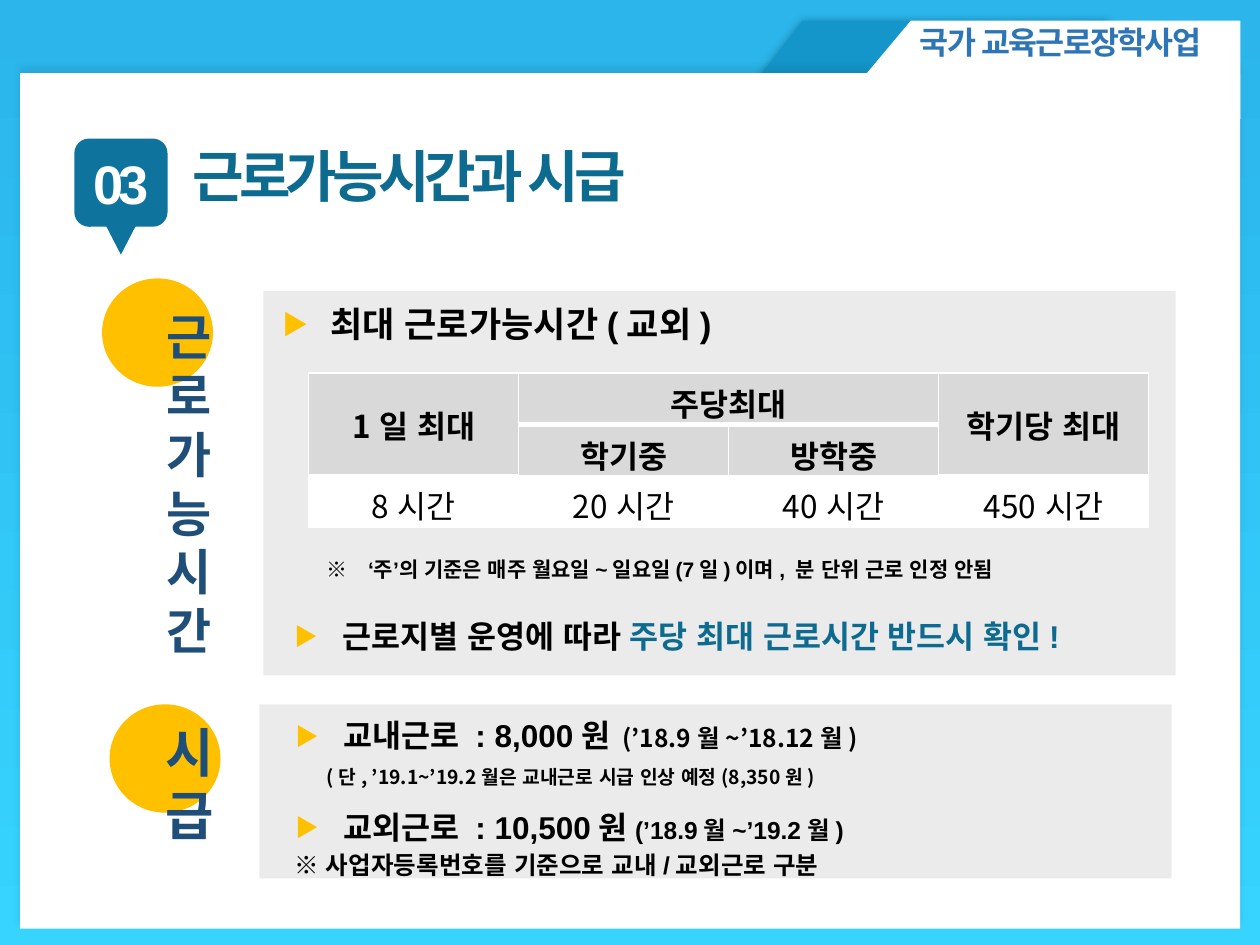
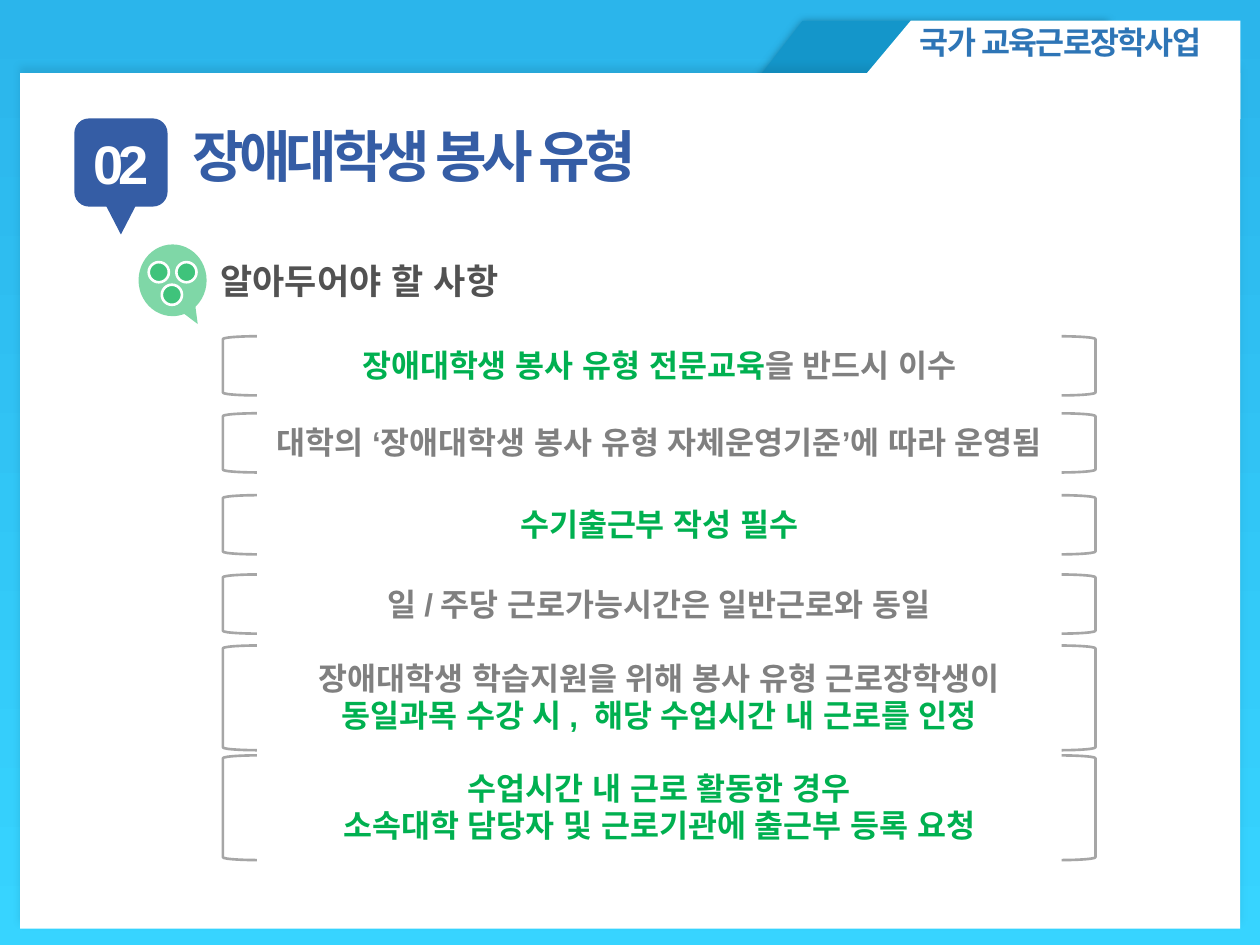
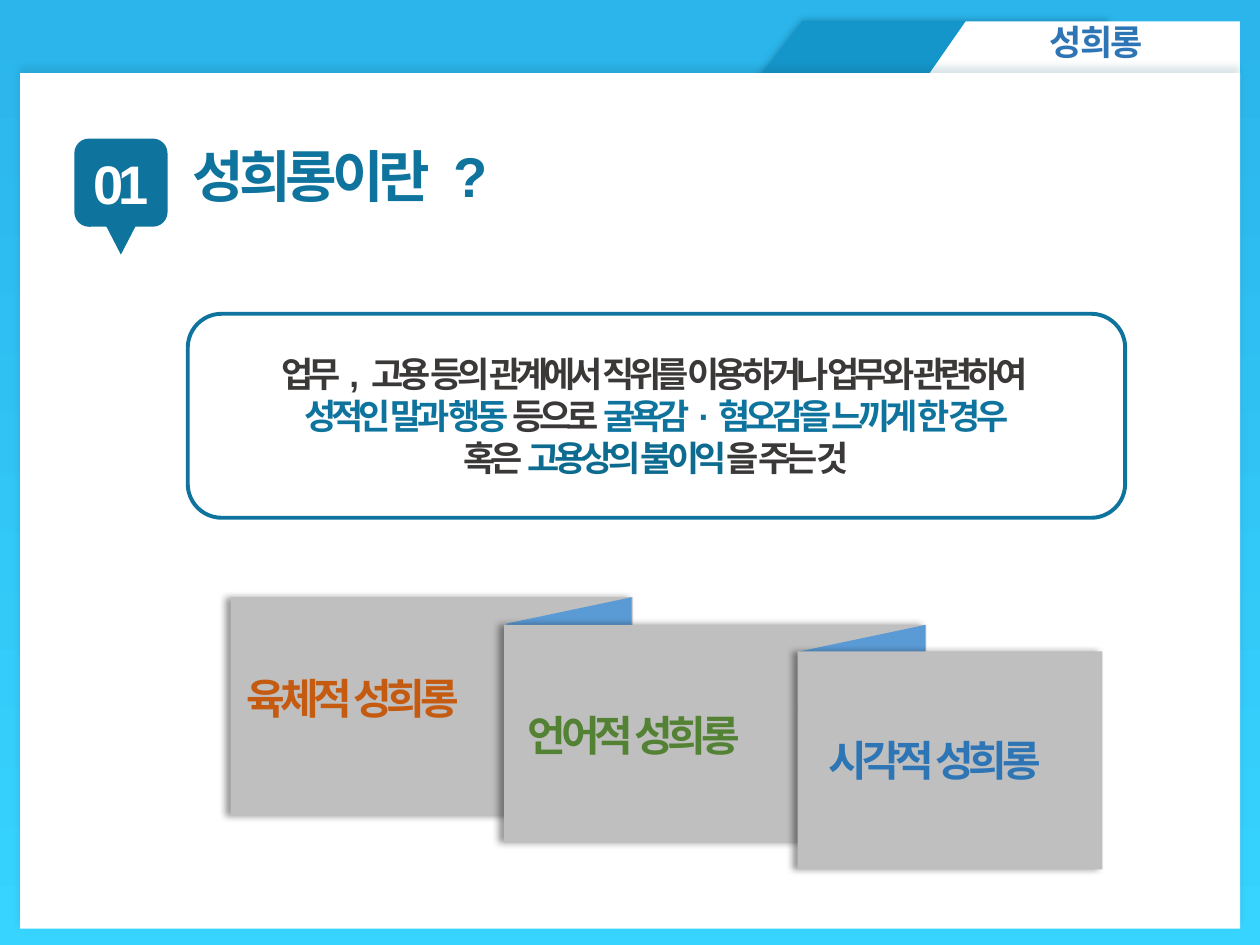
from dataclasses import dataclass
from typing import Any, NamedTuple, Optional

from lxml.etree import SubElement
from pptx import Presentation
from pptx.dml.color import RGBColor
from pptx.enum.shapes import MSO_SHAPE as Preset
from pptx.enum.text import MSO_ANCHOR as Anchor, MSO_AUTO_SIZE as AutoSize, PP_ALIGN as Align
from pptx.oxml.ns import qn
from pptx.util import Pt

WHITE = RGBColor(0xFF, 0xFF, 0xFF)
BLACK = RGBColor(0, 0, 0)
SKY_TOP = RGBColor(0x2B, 0xB5, 0xEB)
SKY_BOTTOM = RGBColor(0x37, 0xD4, 0xFF)
TAB_BLUE = RGBColor(0x14, 0x96, 0xCA)
SHADOW_BLUE = RGBColor(0x0A, 0x4C, 0x66)
TEAL = RGBColor(0x0F, 0x74, 0x9D)
DEEP_TEAL = RGBColor(0x0E, 0x6B, 0x90)
INDIGO = RGBColor(0x35, 0x5D, 0xA5)
NAVY = RGBColor(0x1F, 0x4E, 0x79)
BLUE = RGBColor(0x2E, 0x75, 0xB6)
FOLD_BLUE = RGBColor(0x5B, 0x9B, 0xD5)
AMBER = RGBColor(0xFF, 0xC0, 0x00)
GREEN = RGBColor(0x00, 0xB0, 0x50)
OLIVE = RGBColor(0x54, 0x82, 0x35)
ORANGE = RGBColor(0xC5, 0x5A, 0x11)
LIGHT_GRAY = RGBColor(0xD9, 0xD9, 0xD9)
SILVER = RGBColor(0xBF, 0xBF, 0xBF)
BRACKET_GRAY = RGBColor(0xA6, 0xA6, 0xA6)
GRAY = RGBColor(0x80, 0x80, 0x80)
DARK_GRAY = RGBColor(0x52, 0x52, 0x52)
CHARCOAL = RGBColor(0x3B, 0x38, 0x38)

LATIN = "Arial"
KOREAN = "Noto Sans CJK KR"


class Box(NamedTuple):
    left: float
    top: float
    width: float
    height: float

    def lengths(self) -> tuple:
        return tuple(Pt(value) for value in self)


class Shadow(NamedTuple):
    color: RGBColor
    opacity: int
    blur: float
    distance: float
    direction: int


@dataclass
class Words:
    text: str
    size: float = 18
    color: RGBColor = BLACK
    bold: bool = True
    font: str = LATIN
    tracking: float = 0


@dataclass
class Line:
    words: list[Words]
    align: Align = Align.LEFT
    bullet: bool = False
    indent: float = 0
    spacing: float = 1.2


@dataclass
class Look:
    fill: Optional[RGBColor] = None
    opacity: int = 100
    line: Optional[RGBColor] = None
    weight: float = 1.5
    shadow: Optional[Shadow] = None
    rotation: int = 0
    flipped: bool = False


@dataclass
class Page:
    title: str
    number: str
    color: RGBColor
    title_color: RGBColor
    badge_top: float
    tab_text: Words
    tab_text_box: Box
    tab: Box
    tab_in_front: bool = True


PANEL_SHADOW = Shadow(SHADOW_BLUE, 14, 4, 3, 270)
TAB_SHADOW = Shadow(SHADOW_BLUE, 52, 5, 0, 0)
RIBBON_SHADOW = Shadow(BLACK, 40, 4, 3, 180)
WIDE_TAB = Box(563, -77.8, 56.2, 235.4)
NARROW_TAB = Box(582.5, -57.6, 56.2, 195.8)
PROGRAM = Words("국가 교육근로장학사업", 18, BLUE, tracking=-1)
PROGRAM_BOX = Box(518.6, 9.4, 193, 28.8)


def assign(target: Any, formats: dict) -> None:
    for name, value in formats.items():
        setattr(target, name, value)


def write(frame: Any, lines: list[Line], anchor: Anchor = Anchor.TOP,
          inset: tuple = (7.2, 3.6)) -> None:
    side, edge = Pt(inset[0]), Pt(inset[1])
    assign(frame, {"word_wrap": True, "auto_size": AutoSize.NONE, "vertical_anchor": anchor,
                   "margin_left": side, "margin_right": side,
                   "margin_top": edge, "margin_bottom": edge})
    for index, line in enumerate(lines):
        write_line(frame.add_paragraph() if index else frame.paragraphs[0], line)


def write_line(paragraph: Any, line: Line) -> None:
    largest = max(words.size for words in line.words)
    assign(paragraph, {"alignment": line.align, "line_spacing": Pt(largest * line.spacing)})
    properties = paragraph._p.get_or_add_pPr()
    if line.indent or line.bullet:
        properties.set("marL", str(Pt(27.4 if line.bullet else line.indent)))
    if line.bullet:
        properties.set("indent", str(-Pt(27.4)))
        color = SubElement(properties, qn("a:buClr"))
        SubElement(color, qn("a:srgbClr"), val=str(AMBER))
        SubElement(properties, qn("a:buSzPct"), val="75000")
        SubElement(properties, qn("a:buFont"), typeface=KOREAN)
        SubElement(properties, qn("a:buChar"), char="▶")
    for words in line.words:
        run = paragraph.add_run()
        run.text = words.text
        assign(run.font, {"name": words.font, "size": Pt(words.size), "bold": words.bold})
        run.font.color.rgb = words.color
        run_properties = run._r.get_or_add_rPr()
        SubElement(run_properties, qn("a:ea"), typeface=LATIN)
        if words.tracking:
            run_properties.set("spc", str(int(words.tracking * 100)))


def add_text(slide: Any, box: Box, lines: list[Line]) -> None:
    write(slide.shapes.add_textbox(*box.lengths()).text_frame, lines)


def add_label(slide: Any, box: Box, lines: list[Line], anchor: Anchor = Anchor.MIDDLE) -> None:
    shape = add_figure(slide, Preset.FLOWCHART_ALTERNATE_PROCESS, box, Look())
    write(shape.text_frame, lines, anchor, (0, 0))


def add_upright_label(slide: Any, box: Box, text: str, size: float) -> None:
    shape = add_figure(slide, Preset.FLOWCHART_PROCESS, box, Look(rotation=90))
    write(shape.text_frame, [Line([Words(letter, size, NAVY)]) for letter in text],
          Anchor.MIDDLE, (0, 0))
    shape.text_frame._txBody.bodyPr.set("vert", "vert270")


def dress(shape: Any, look: Look) -> None:
    shape.rotation = look.rotation
    if look.flipped:
        shape._element.spPr.find(qn("a:xfrm")).set("flipV", "1")
    if look.fill is None:
        shape.fill.background()
    else:
        shape.fill.solid()
        shape.fill.fore_color.rgb = look.fill
        if look.opacity < 100:
            color = shape._element.spPr.find(qn("a:solidFill"))[0]
            SubElement(color, qn("a:alpha"), val=str(look.opacity * 1000))
    if look.line is None:
        shape.line.fill.background()
    else:
        shape.line.color.rgb = look.line
        shape.line.width = Pt(look.weight)
    shape.shadow.inherit = False
    if look.shadow:
        effects = shape._element.spPr.find(qn("a:effectLst"))
        shadow = SubElement(effects, qn("a:outerShdw"), blurRad=str(Pt(look.shadow.blur)),
                            dist=str(Pt(look.shadow.distance)),
                            dir=str(look.shadow.direction * 60000),
                            algn="ctr", rotWithShape="0")
        color = SubElement(shadow, qn("a:srgbClr"), val=str(look.shadow.color))
        SubElement(color, qn("a:alpha"), val=str(look.shadow.opacity * 1000))


def add_figure(slide: Any, preset: Preset, box: Box, look: Look) -> Any:
    shape = slide.shapes.add_shape(preset, *box.lengths())
    dress(shape, look)
    return shape


def add_frame(slide: Any, page: Page) -> None:
    tab = (Preset.FLOWCHART_MANUAL_INPUT, page.tab, Look(WHITE, rotation=90, flipped=True))
    panel = (Preset.RECTANGLE, Box(11.5, 41.8, 697.2, 488.9), Look(WHITE, shadow=PANEL_SHADOW))
    add_figure(slide, Preset.FLOWCHART_MANUAL_INPUT, Box(496, -69.1, 56.2, 218.2),
               Look(TAB_BLUE, shadow=TAB_SHADOW, rotation=90, flipped=True))
    for figure in (panel, tab) if page.tab_in_front else (tab, panel):
        add_figure(slide, *figure)
    add_text(slide, page.tab_text_box, [Line([page.tab_text])])


def add_heading(slide: Any, page: Page) -> None:
    top = page.badge_top
    badge = add_figure(slide, Preset.FLOWCHART_ALTERNATE_PROCESS,
                       Box(42.5, top, 53.3, 50.4), Look(page.color))
    write(badge.text_frame, [Line([Words(page.number, 31, WHITE, tracking=-3)], Align.CENTER)],
          Anchor.MIDDLE, (2.9, 3.6))
    add_figure(slide, Preset.FLOWCHART_MERGE, Box(58.3, top + 45.4, 21.6, 20.9),
               Look(page.color))
    title = slide.shapes.title
    left, upper, width, height = Box(103, top - 1.9, 363, 46).lengths()
    assign(title, {"left": left, "top": upper, "width": width, "height": height})
    write(title.text_frame, [Line([Words(page.title, 32, page.title_color, tracking=-3)])])
    slide.shapes._spTree.append(title._element)


def start_slide(presentation: Any, page: Page) -> Any:
    slide = presentation.slides.add_slide(presentation.slide_layouts[5])
    add_frame(slide, page)
    add_heading(slide, page)
    return slide


def add_border(cell: Any, side: str, weight: float) -> None:
    border = SubElement(cell._tc.get_or_add_tcPr(), qn(f"a:ln{side}"), w=str(Pt(weight)))
    SubElement(SubElement(border, qn("a:solidFill")), qn("a:srgbClr"), val=str(WHITE))


def add_hours_table(slide: Any) -> None:
    rows = [["1일 최대", "주당최대", "", "학기당 최대"],
            ["", "학기중", "방학중", ""],
            ["8시간", "20시간", "40시간", "450시간"]]
    tall_margins = {(0, 0): 5.2, (0, 3): 1.8}
    box = Box(176.4, 213.1, 480, 88.5)
    table = slide.shapes.add_table(len(rows), len(rows[0]), *box.lengths()).table
    assign(table, {"first_row": False, "horz_banding": False})
    for first, last in (((0, 0), (1, 0)), ((0, 1), (0, 2)), ((0, 3), (1, 3))):
        table.cell(*first).merge(table.cell(*last))
    for row, texts in enumerate(rows):
        table.rows[row].height = Pt(29.5)
        is_header = row < 2
        for column, text in enumerate(texts):
            cell = table.cell(row, column)
            for side in "LRTB":
                add_border(cell, side, 3 if (row, side) in ((0, "B"), (1, "T")) else 1)
            cell.fill.solid()
            cell.fill.fore_color.rgb = LIGHT_GRAY if is_header else WHITE
            margin = tall_margins.get((row, column), 6.5 if is_header else 7.5)
            assign(cell, {"vertical_anchor": Anchor.MIDDLE, "margin_top": Pt(margin),
                          "margin_bottom": Pt(0)})
            if text:
                write_line(cell.text_frame.paragraphs[0],
                           Line([Words(text, bold=is_header, font=KOREAN)], Align.CENTER))


def build_hours(presentation: Any) -> None:
    slide = start_slide(presentation, Page(
        "근로가능시간과 시급", "03", TEAL, DEEP_TEAL, 79.2,
        PROGRAM, PROGRAM_BOX, WIDE_TAB))
    for left, top in ((58.3, 159.1), (62.6, 402.5)):
        add_figure(slide, Preset.OVAL, Box(left, top, 63.4, 61.9), Look(AMBER))
    for box in (Box(150.5, 166.3, 521.3, 219.6), Box(148.3, 402.5, 521.3, 99.4)):
        add_figure(slide, Preset.RECTANGLE, box, Look(LIGHT_GRAY, 50))
    add_upright_label(slide, Box(7.2, 248.4, 231.1, 55.4), "근로가능시간", 28)
    add_upright_label(slide, Box(76.3, 432, 67.7, 31), "시급", 30)
    add_label(slide, Box(159.8, 170, 290.9, 29.5),
              [Line([Words("최대 근로가능시간(교외)", 20)], bullet=True)])
    add_label(slide, Box(166.3, 340.6, 503.3, 45.4),
              [Line([Words("근로지별 운영에 따라 "),
                     Words("주당 최대 근로시간 반드시 확인!", color=DEEP_TEAL)], bullet=True)])
    add_label(slide, Box(185, 311, 390.2, 28.8),
              [Line([Words("※ ", 12, tracking=4.3), Words("‘주’", 12, font=KOREAN),
                     Words("의 기준은 매주 월요일~일요일(7일)이며, 분 단위 근로 인정 안됨", 12)])])
    add_label(slide, Box(164.9, 394.6, 412.6, 79.2), [
        Line([Words("교내근로 : 8,000원"), Words(" (’18.9월~’18.12월)", 14, font=KOREAN)],
             bullet=True, spacing=1.8),
        Line([Words("(단, ’19.1~’19.2월은 교내근로 시급 인상 예정(8,350원)", 11, font=KOREAN)],
             indent=18, spacing=1.8),
        Line([Words("교외근로 : 10,500원"), Words("(’18.9월~’19.2월)", 14)],
             bullet=True, spacing=1.8)], Anchor.TOP)
    add_label(slide, Box(167, 479.5, 434.9, 28.8),
              [Line([Words("※ 사업자등록번호를 기준으로 교내/교외근로 구분", 14)])])
    add_hours_table(slide)


def build_volunteering(presentation: Any) -> None:
    slide = start_slide(presentation, Page(
        "장애대학생 봉사 유형", "02", INDIGO, INDIGO, 67.7,
        PROGRAM, PROGRAM_BOX, WIDE_TAB))
    add_text(slide, Box(118.8, 144.7, 319.7, 31.7),
             [Line([Words("알아두어야 할 사항", 20, DARK_GRAY)])])
    callout = add_figure(slide, Preset.OVAL_CALLOUT, Box(79.2, 139.7, 38.9, 41), Look(GREEN, 50))
    callout.adjustments[0], callout.adjustments[1] = 0.37, 0.61
    for left, top in ((85, 149.8), (100.8, 149.8), (92.5, 162.7)):
        add_figure(slide, Preset.OVAL, Box(left, top, 11.5, 11.5), Look(GREEN, 50, WHITE))
    notices = [
        (192.2, [[Words("장애대학생 봉사 유형 전문교육", color=GREEN),
                  Words("을 반드시 이수", color=GRAY)]]),
        (236.2, [[Words("대학의 ", color=GRAY), Words("‘", color=GRAY, font=KOREAN),
                  Words("장애대학생 봉사 유형 자체운영기준", color=GRAY),
                  Words("’", color=GRAY, font=KOREAN), Words("에 따라 운영됨", color=GRAY)]]),
        (283, [[Words("수기출근부 작성 필수", color=GREEN)]]),
        (328.3, [[Words("일/주당 근로가능시간은 일반근로와 동일", color=GRAY)]]),
        (368.9, [[Words("장애대학생 학습지원을 위해 봉사 유형 근로장학생이", color=GRAY)],
                 [Words("동일과목 수강 시, 해당 수업시간 내 근로를 인정", color=GREEN)]]),
        (431.7, [[Words("수업시간 내 근로 활동한 경우", color=GREEN)],
                 [Words("소속대학 담당자 및 근로기관에 출근부 등록 요청", color=GREEN)]]),
    ]
    for top, lines in notices:
        height = 7.8 + 26 * len(lines)
        for preset, left in ((Preset.LEFT_BRACKET, 127.4), (Preset.RIGHT_BRACKET, 606.6)):
            add_figure(slide, preset, Box(left, top, 19.4, height),
                       Look(WHITE, line=BRACKET_GRAY))
        add_text(slide, Box(147, top + 0.5 + 1.7 * len(lines), 459.4, height - 5),
                 [Line(words, Align.CENTER) for words in lines])


def add_fold(slide: Any, left: float, top: float) -> None:
    corners = [(1.4, 15.1), (73, 0), (73, 50.4), (0, 50.4)]
    points = [(Pt(left + x), Pt(top + y)) for x, y in corners]
    builder = slide.shapes.build_freeform(*points[0])
    builder.add_line_segments(points[1:], close=True)
    dress(builder.convert_to_shape(), Look(FOLD_BLUE))


def build_harassment(presentation: Any) -> None:
    slide = start_slide(presentation, Page(
        "성희롱이란 ?", "01", TEAL, TEAL, 79.2,
        Words("성희롱", 20, BLUE, tracking=-1), Box(592.6, 7.9, 101.5, 31.7),
        NARROW_TAB, tab_in_front=False))
    definition = add_figure(slide, Preset.FLOWCHART_ALTERNATE_PROCESS,
                            Box(107.3, 179.3, 535.7, 116.6), Look(line=TEAL, weight=2.25))
    phrases = [
        [("업무, 고용 등의 관계에서 직위를 이용하거나 업무와 관련하여 ", CHARCOAL)],
        [("성적인 말과 행동 ", TEAL), ("등으로 ", CHARCOAL),
         ("굴욕감·혐오감을 느끼게 한 경우", TEAL)],
        [("혹은 ", CHARCOAL), ("고용상의 불이익", DEEP_TEAL), ("을 주는 것", CHARCOAL)],
    ]
    write(definition.text_frame,
          [Line([Words(text, 20, color, tracking=-3) for text, color in phrase], Align.CENTER)
           for phrase in phrases], Anchor.MIDDLE, (0, 0))
    ribbons = [Box(131.8, 341.3, 229.7, 124.6), Box(288, 357.1, 241.2, 124.6),
               Box(455.8, 372.2, 174.2, 124.6)]
    for index, ribbon in enumerate(ribbons):
        add_figure(slide, Preset.RECTANGLE, ribbon, Look(SILVER, shadow=RIBBON_SHADOW))
        if index + 1 < len(ribbons):
            add_fold(slide, ribbons[index + 1].left, ribbon.top)
    for text, color, left, top in (("육체적 성희롱", ORANGE, 133.9, 380.9),
                                   ("언어적 성희롱", OLIVE, 294.5, 401.9),
                                   ("시각적 성희롱", BLUE, 466.6, 416.4)):
        add_text(slide, Box(left, top, 228.2, 36), [Line([Words(text, 24, color, tracking=-3)])])


def main() -> None:
    presentation = Presentation()
    assign(presentation, {"slide_width": Pt(720), "slide_height": Pt(540)})
    backdrop = presentation.slide_master.background.fill
    backdrop.gradient()
    backdrop.gradient_angle = 270
    for stop, color in zip(backdrop.gradient_stops, (SKY_TOP, SKY_BOTTOM)):
        stop.color.rgb = color
    build_hours(presentation)
    build_volunteering(presentation)
    build_harassment(presentation)
    presentation.save("out.pptx")


if __name__ == "__main__":
    main()
